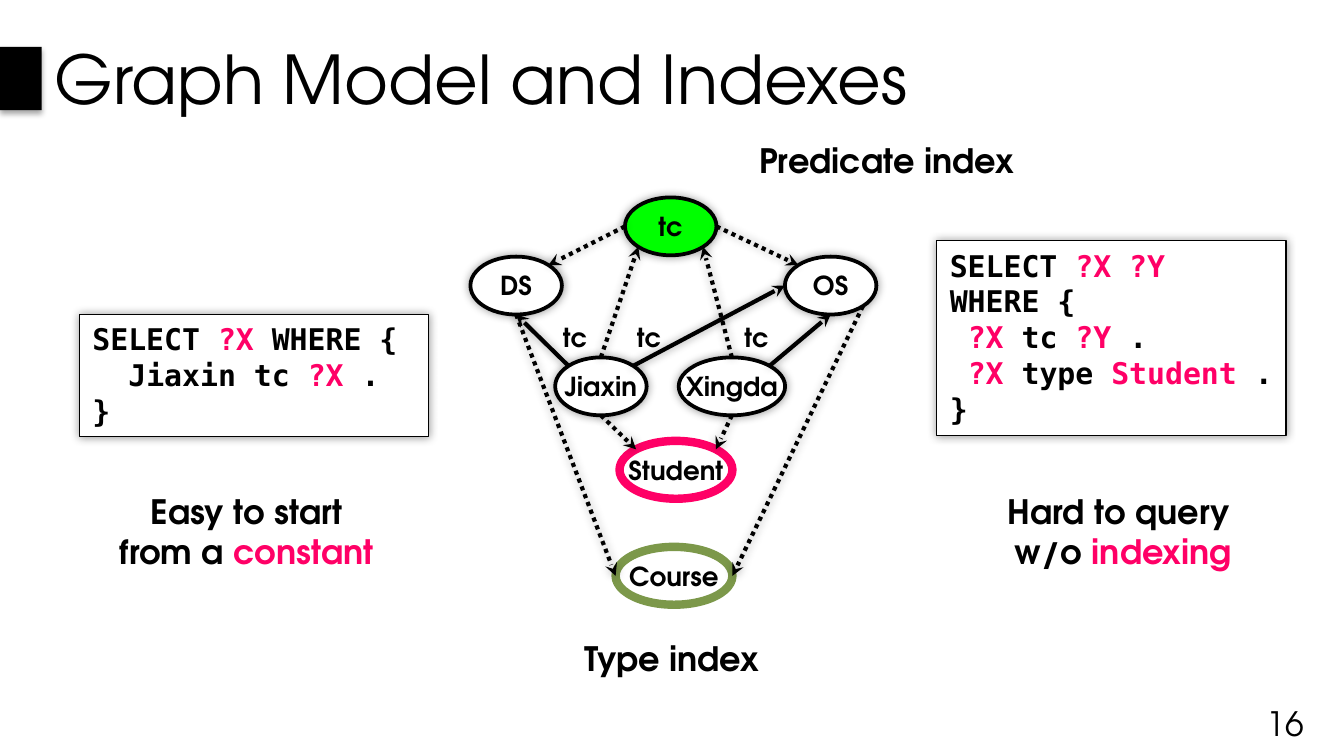
from lxml.etree import SubElement
from pptx import Presentation
from pptx.dml.color import RGBColor
from pptx.enum.dml import MSO_LINE
from pptx.enum.shapes import MSO_CONNECTOR, MSO_SHAPE
from pptx.enum.text import MSO_ANCHOR, PP_ALIGN
from pptx.oxml.ns import qn
from pptx.util import Pt

COLORS = {"ink": "000000", "paper": "FFFFFF", "accent": "FF0066",
          "predicate": "00FF00", "course": "7C984A"}
SANS, MONO = "TeX Gyre Adventor", "DejaVu Sans Mono"
CODE_SIZE = 16
CODE_CHAR = 9.63  # width of one monospaced character
NODE_HEIGHT = 31
DIAGONAL = 0.707
SITES = {"top": (0, -1), "bottom": (0, 1), "left": (-1, 0), "right": (1, 0),
         "top left": (-DIAGONAL, -DIAGONAL), "top right": (DIAGONAL, -DIAGONAL),
         "bottom left": (-DIAGONAL, DIAGONAL), "bottom right": (DIAGONAL, DIAGONAL)}

# name: left, top, width, fill, outline, outline width
NODES = {
    "DS": (0, 31.7, 49, "paper", "ink", 2),
    "OS": (168.5, 31.7, 49, "paper", "ink", 2),
    "tc": (82.8, 0, 49, "predicate", "ink", 2),
    "Jiaxin": (45.4, 85.7, 49, "paper", "ink", 2),
    "Xingda": (111.6, 85.7, 57, "paper", "ink", 2),
    "Student": (79.9, 130.4, 60.5, "paper", "accent", 4.5),
    "Course": (77.8, 187.2, 62.6, "paper", "course", 4.5),
}
FACT_EDGES = [
    ("Jiaxin", "top left", "DS", "bottom"),
    ("Jiaxin", "top right", "OS", "left"),
    ("Xingda", "top right", "OS", "bottom"),
]
INDEX_EDGES = [
    ("Jiaxin", "top", "tc", "bottom left"),
    ("Xingda", "top", "tc", "bottom right"),
    ("tc", "left", "DS", "top right"),
    ("tc", "right", "OS", "top left"),
    ("Jiaxin", "bottom", "Student", "top left"),
    ("Xingda", "bottom", "Student", "top right"),
    ("DS", "bottom", "Course", "left"),
    ("OS", "bottom right", "Course", "right"),
]
EDGE_LABEL_LEFTS = (42.5, 82.1, 139.7)


def color(name):
    return RGBColor.from_string(COLORS[name])


def points(*lengths):
    return [Pt(length) for length in lengths]


def add_shadow(effects, alpha=40, blur=5, distance=0, direction=0):
    shadow = SubElement(effects, qn("a:outerShdw"), blurRad=str(Pt(blur)),
                        dist=str(Pt(distance)), dir=str(direction * 60000),
                        algn="ctr", rotWithShape="0")
    ink = SubElement(shadow, qn("a:srgbClr"), val=COLORS["ink"])
    SubElement(ink, qn("a:alpha"), val=str(alpha * 1000))


def write(shape, lines, size, font=SANS, bold=True, align=PP_ALIGN.LEFT,
          anchor=MSO_ANCHOR.TOP, wrap=True, margins=None):
    """Fill a shape with lines; text between bars takes the accent colour."""
    frame = shape.text_frame
    settings = {"word_wrap": wrap, "vertical_anchor": anchor, **(margins or {})}
    for key, value in settings.items():
        setattr(frame, key, value)
    for index, line in enumerate(lines):
        paragraph = frame.paragraphs[0] if index == 0 else frame.add_paragraph()
        paragraph.alignment = align
        for part, words in enumerate(line.split("|")):
            if not words:
                continue
            run = paragraph.add_run()
            run.text = words
            for key, value in {"name": font, "size": Pt(size), "bold": bold}.items():
                setattr(run.font, key, value)
            run.font.color.rgb = color("accent" if part % 2 else "ink")


def add_text(slide, box, lines, size, **style):
    write(slide.shapes.add_textbox(*points(*box)), lines, size, **style)


def add_block(slide, kind, box, fill, outline=None, width=0, shadow=None):
    """Draw a filled shape; shadow holds the options of add_shadow."""
    block = slide.shapes.add_shape(kind, *points(*box))
    block.fill.solid()
    block.fill.fore_color.rgb = color(fill)
    if outline:
        block.line.color.rgb = color(outline)
        block.line.width = Pt(width)
    else:
        block.line.fill.background()
    block.shadow.inherit = False
    if shadow is not None:
        add_shadow(block._element.spPr.find(qn("a:effectLst")), **shadow)
    return block


def add_header(slide, box):
    left, top, width, height = box
    bar = 22.3
    add_text(slide, (left + bar, top, width - bar, height),
             ["Graph Model and Indexes"], 36, bold=False, anchor=MSO_ANCHOR.MIDDLE)
    add_block(slide, MSO_SHAPE.RECTANGLE, (left, top + 25.2, bar, 33.8), "ink",
              shadow={"alpha": 35, "blur": 3.1, "distance": 1.8, "direction": 90})


def add_query(slide, box, code):
    """Draw a code box; code is a list of (indent in characters, line)."""
    query = add_block(slide, MSO_SHAPE.RECTANGLE, box, "paper", "ink", 0.75, {})
    write(query, [line for _, line in code], CODE_SIZE, MONO,
          margins={"margin_right": Pt(4)})
    for paragraph, (indent, _) in zip(query.text_frame.paragraphs, code):
        paragraph._p.get_or_add_pPr().set("marL", str(Pt(indent * CODE_CHAR)))


def add_edge(slide, start, end, dotted):
    edge = slide.shapes.add_connector(MSO_CONNECTOR.STRAIGHT, *points(*start, *end))
    edge.line.color.rgb = color("ink")
    edge.line.width = Pt(2.25)
    if dotted:
        edge.line.dash_style = MSO_LINE.ROUND_DOT
    SubElement(edge.line._get_or_add_ln(), qn("a:tailEnd"), type="stealth")
    add_shadow(SubElement(edge._element.spPr, qn("a:effectLst")))


def add_graph(slide, box):
    left, top, _, _ = box

    def site(node, side):
        x, y, width = NODES[node][:3]
        across, down = SITES[side]
        return (left + x + width / 2 * (1 + across),
                top + y + NODE_HEIGHT / 2 * (1 + down))

    no_margins = {f"margin_{side}": 0 for side in ("left", "top", "right", "bottom")}
    for name, (x, y, width, fill, outline, weight) in NODES.items():
        node = add_block(slide, MSO_SHAPE.OVAL, (left + x, top + y, width, NODE_HEIGHT),
                         fill, outline, weight, {} if outline == "ink" else None)
        write(node, [name], 14, align=PP_ALIGN.CENTER, anchor=MSO_ANCHOR.MIDDLE,
              wrap=False, margins=no_margins)
    for edges, dotted in ((FACT_EDGES, False), (INDEX_EDGES, True)):
        for source, leaving, target, entering in edges:
            add_edge(slide, site(source, leaving), site(target, entering), dotted)
    for x in EDGE_LABEL_LEFTS:
        add_text(slide, (left + x, top + 62.7, 57.6, 24.5), ["tc"], 14)


def main():
    deck = Presentation()
    deck.slide_width, deck.slide_height = points(720, 405)
    slide = deck.slides.add_slide(deck.slide_layouts[6])

    add_header(slide, (0, 0, 720, 83.5))
    add_graph(slide, (252, 105.8, 217.5, 218.2))
    add_query(slide, (42.5, 168.5, 187.2, 65.5),
              [(0, "SELECT |?X| WHERE {"), (2, "Jiaxin tc |?X| ."), (0, "}")])
    add_query(slide, (501.8, 128.9, 187.2, 104.4),
              [(0, "SELECT |?X ?Y|"), (0, "WHERE {"), (1, "|?X |tc |?Y |."),
               (1, "|?X |type |Student |."), (0, "}")])
    verdicts = [((56.2, 259.2, 157, 51), ["Easy to start ", "from a |constant |"]),
                ((532.1, 259.2, 139.7, 51), ["Hard to query ", "w/o |indexing|"])]
    for box, lines in verdicts:
        add_text(slide, box, lines, 18, align=PP_ALIGN.CENTER, wrap=False)
    add_text(slide, (399.6, 71.3, 154, 29), ["Predicate index"], 18)
    add_text(slide, (306, 338.4, 112, 29), ["Type index"], 18)
    add_text(slide, (654.5, 376.6, 51, 21.6), ["16"], 18, bold=False,
             align=PP_ALIGN.RIGHT, anchor=MSO_ANCHOR.MIDDLE)
    deck.save("out.pptx")


if __name__ == "__main__":
    main()
